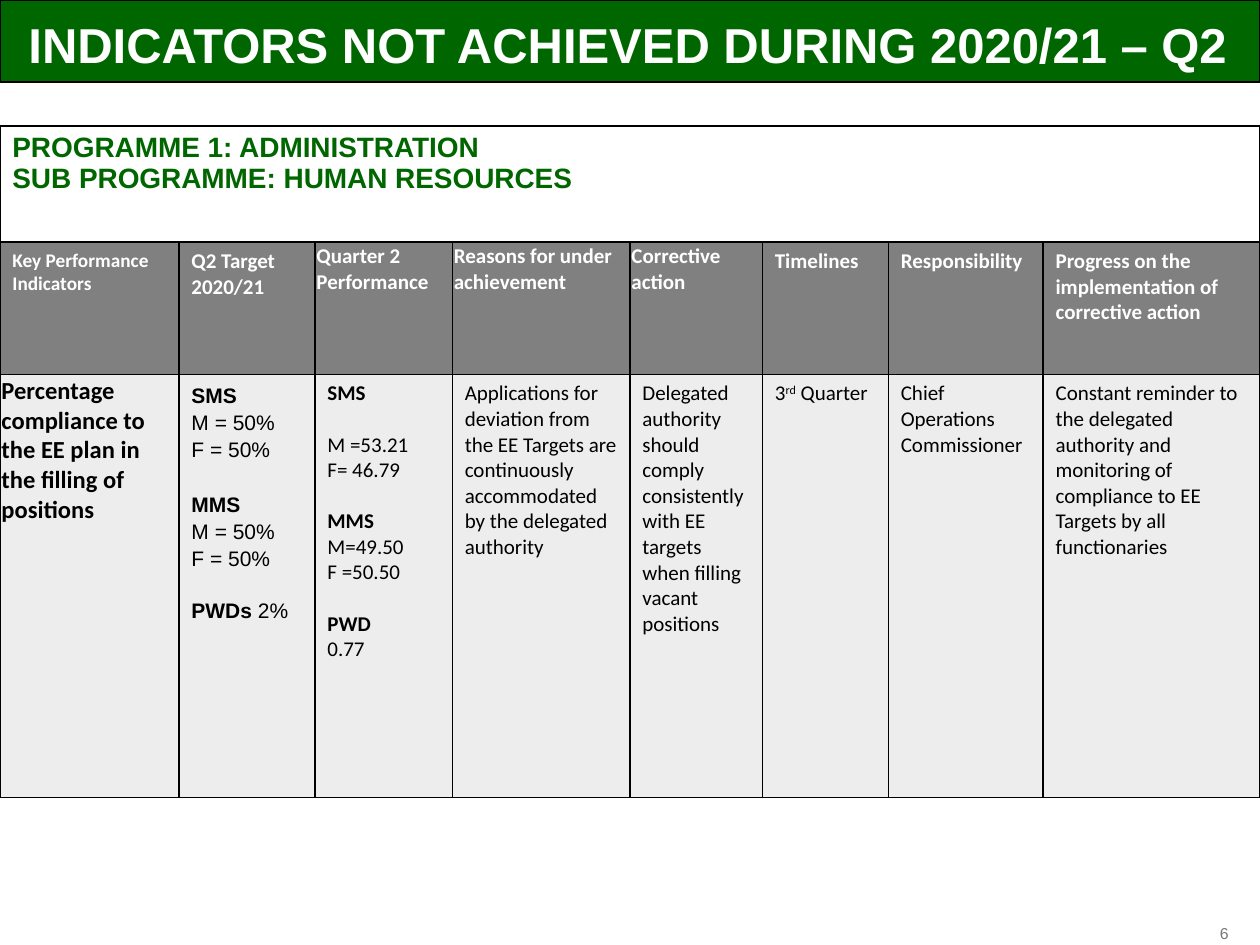
from dataclasses import dataclass

from lxml import etree
from pptx import Presentation
from pptx.dml.color import RGBColor
from pptx.enum.shapes import MSO_SHAPE
from pptx.enum.text import MSO_ANCHOR, PP_ALIGN
from pptx.oxml.ns import qn
from pptx.util import Cm, Pt

RECTANGLE = MSO_SHAPE.RECTANGLE
MIDDLE = MSO_ANCHOR.MIDDLE
CENTER, RIGHT = PP_ALIGN.CENTER, PP_ALIGN.RIGHT


@dataclass(frozen=True)
class Theme:
    green: RGBColor = RGBColor(0x00, 0x66, 0x00)
    white: RGBColor = RGBColor(0xFF, 0xFF, 0xFF)
    black: RGBColor = RGBColor(0x00, 0x00, 0x00)
    header: RGBColor = RGBColor(0x80, 0x80, 0x80)
    body: RGBColor = RGBColor(0xED, 0xED, 0xED)
    number: RGBColor = RGBColor(0x77, 0x78, 0x7B)
    sans: str = "Arial"
    text: str = "Calibri"
    title_size: int = 28
    programme_size: int = 16
    indicator_size: int = 14
    cell_size: int = 12
    small_size: int = 11
    number_size: int = 9


THEME = Theme()


def write(frame, lines, size, color, name=THEME.text, bold=False, align=None):
    """Fill a frame with one paragraph per line and return the paragraphs."""
    frame.word_wrap = True
    for index, line in enumerate(lines):
        para = frame.paragraphs[0] if index == 0 else frame.add_paragraph()
        para.add_run().text = line
        para.alignment = align
        para.font.size = Pt(size)
        para.font.name = name
        para.font.bold = bold
        para.font.color.rgb = color
    return frame.paragraphs


def style_cell(cell, fill, tight=False):
    """Set margins, black borders and the fill; tight cells hug their text."""
    side, top, bottom = (0.03, 0.03, 0) if tight else (0.25, 0.13, 0.13)
    cell.margin_left = cell.margin_right = Cm(side)
    cell.margin_top, cell.margin_bottom = Cm(top), Cm(bottom)
    properties = cell._tc.get_or_add_tcPr()
    for edge in ("a:lnL", "a:lnR", "a:lnT", "a:lnB"):
        line = etree.SubElement(properties, qn(edge), w=str(Pt(1)))
        solid = etree.SubElement(line, qn("a:solidFill"))
        etree.SubElement(solid, qn("a:srgbClr"), val=str(THEME.black))
    if fill is None:
        cell.fill.background()
    else:
        cell.fill.solid()
        cell.fill.fore_color.rgb = fill


deck = Presentation()
deck.slide_width, deck.slide_height = Cm(25.4), Cm(19.05)
page = deck.slides.add_slide(deck.slide_layouts[6])

# Title band
band = page.shapes.add_shape(RECTANGLE, 0, 0, Cm(25.4), Cm(1.65))
band.shadow.inherit = False
band.fill.solid()
band.fill.fore_color.rgb = THEME.green
band.line.color.rgb = THEME.black
band.line.width = Pt(1)

# Table of indicators
WIDTHS = [3.61, 2.74, 2.77, 3.58, 2.67, 2.54, 3.12, 4.37]
HEIGHTS = [2.34, 2.67, 8.53]
HEADINGS = [
    "Key Performance Indicators",
    "Q2 Target 2020/21",
    "Quarter 2 Performance",
    "Reasons for under achievement",
    "Corrective action",
    "Timelines",
    "Responsibility",
    "Progress on the implementation of corrective action",
]
TIGHT_HEADINGS = (2, 3, 4)
INDICATOR = "Percentage compliance to the EE plan in the filling of positions"
TARGETS = ["SMS", "M = 50%", "F = 50%", "MMS", "M = 50%", "F = 50%", "PWDs"]
RESULTS = ["SMS", "M =53.21", "F= 46.79", "MMS", "M=49.50", "F =50.50", "PWD", "0.77"]
GROUPS = ("SMS", "MMS", "PWDs", "PWD")
NOTES = {
    3: "Applications for deviation from the EE Targets are continuously "
       "accommodated by the delegated authority",
    4: "Delegated authority should comply consistently with EE targets "
       "when filling vacant positions",
    5: "3",
    6: "Chief Operations Commissioner",
    7: "Constant reminder to the delegated authority and monitoring of "
       "compliance to EE Targets by all functionaries",
}

frame = page.shapes.add_table(3, 8, 0, Cm(2.54), Cm(25.4), Cm(13.54))
table = frame.table
table.first_row = table.horz_banding = False
for column, width in zip(table.columns, WIDTHS):
    column.width = Cm(width)
for row, height in zip(table.rows, HEIGHTS):
    row.height = Cm(height)

for index, heading in enumerate(HEADINGS):
    style_cell(table.cell(0, index), None)
    header = table.cell(1, index)
    style_cell(header, THEME.header, index in TIGHT_HEADINGS)
    size = THEME.small_size if index == 0 else THEME.cell_size
    write(header.text_frame, [heading], size, THEME.white, bold=True)
    style_cell(table.cell(2, index), THEME.body, index == 0)

programme = table.cell(0, 0)
programme.merge(table.cell(0, 7))
write(programme.text_frame,
      ["PROGRAMME 1: ADMINISTRATION", "SUB PROGRAMME: HUMAN RESOURCES"],
      THEME.programme_size, THEME.green, THEME.sans, True)

write(table.cell(2, 0).text_frame, [INDICATOR],
      THEME.indicator_size, THEME.black, bold=True)
targets = write(table.cell(2, 1).text_frame, TARGETS,
                THEME.cell_size, THEME.black, THEME.sans)
results = write(table.cell(2, 2).text_frame, RESULTS, THEME.cell_size, THEME.black)
for paragraphs, gap in ((targets, 16), (results, 14.6)):
    for index, para in enumerate(paragraphs):
        if para.text in GROUPS:
            para.runs[0].font.bold = True
            if index > 0:
                para.space_before = Pt(gap)
for para in targets[:-1]:
    para.line_spacing = 1.15
targets[-1].add_run().text = " 2%"
results[1].space_before = Pt(14.6)

for index, note in NOTES.items():
    write(table.cell(2, index).text_frame, [note], THEME.cell_size, THEME.black)
quarter = table.cell(2, 5).text_frame.paragraphs[0]
ordinal = quarter.add_run()
ordinal.text = "rd"
ordinal._r.get_or_add_rPr().set("baseline", "30000")
quarter.add_run().text = " Quarter"

# Title and page number
LABELS = [
    ("INDICATORS NOT ACHIEVED DURING 2020/21 – Q2", (0, 0.43, 25.3, 1.07),
     THEME.title_size, THEME.white, True, CENTER, 0.9),
    ("6", (24.03, 18.62, 0.74, 0.38),
     THEME.number_size, THEME.number, False, RIGHT, 1.0),
]
for text, place, size, color, bold, align, spacing in LABELS:
    box = page.shapes.add_textbox(*map(Cm, place))
    label = box.text_frame
    label.margin_left = label.margin_right = label.margin_top = label.margin_bottom = 0
    para = write(label, [text], size, color, THEME.sans, bold, align)[0]
    para.line_spacing = spacing
label.vertical_anchor = MIDDLE

deck.save("out.pptx")
